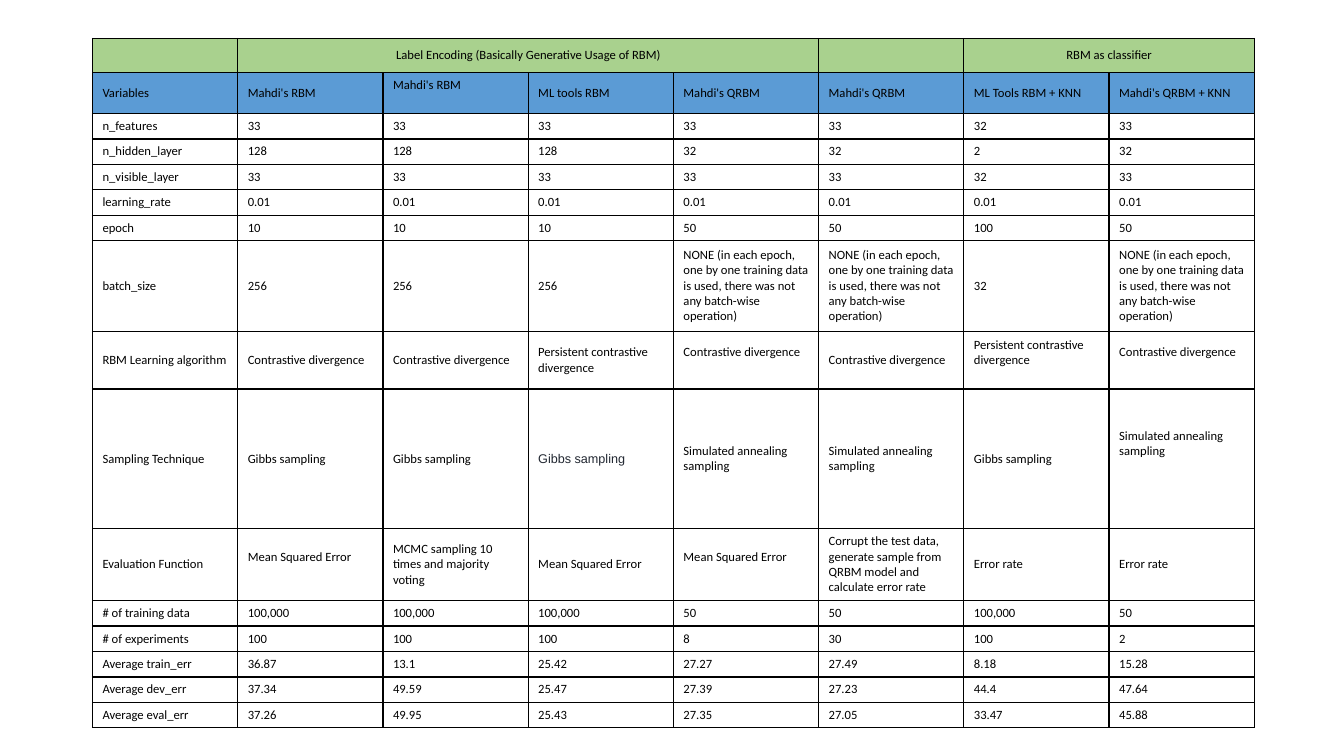
from lxml import etree
from pptx import Presentation
from pptx import util as u
from pptx.dml import color
from pptx.enum import text
from pptx.oxml import ns

COLORS = {"group": "A9D18E", "header": "5B9BD5", "text": "000000",
          "slate": "222832", "border": "000000"}

NO_BATCH = ("NONE (in each epoch, one by one training data is used, "
            "there was not any batch-wise operation)")
CD = "Contrastive divergence"
PCD = "Persistent contrastive divergence"
GIBBS = "Gibbs sampling"
ANNEAL = "Simulated annealing sampling"
MSE = "Mean Squared Error"

# Row height in cm, then the cell texts
ROWS = [
    (0.86, ["", "Label Encoding (Basically Generative Usage of RBM)", "", "", "",
            "", "RBM as classifier", ""]),
    (1.03, ["Variables", "Mahdi's RBM", "Mahdi's RBM", "ML tools RBM", "Mahdi's QRBM",
            "Mahdi's QRBM", "ML Tools RBM + KNN", "Mahdi's QRBM + KNN"]),
    (0.64, ["n_features", "33", "33", "33", "33", "33", "32", "33"]),
    (0.64, ["n_hidden_layer", "128", "128", "128", "32", "32", "2", "32"]),
    (0.64, ["n_visible_layer", "33", "33", "33", "33", "33", "32", "33"]),
    (0.64, ["learning_rate"] + ["0.01"] * 7),
    (0.64, ["epoch", "10", "10", "10", "50", "50", "100", "50"]),
    (2.28, ["batch_size", "256", "256", "256", NO_BATCH, NO_BATCH, "32", NO_BATCH]),
    (1.46, ["RBM Learning algorithm", CD, CD, PCD, CD, CD, PCD, CD]),
    (3.52, ["Sampling Technique", GIBBS, GIBBS, GIBBS, ANNEAL, ANNEAL, GIBBS, ANNEAL]),
    (1.81, ["Evaluation Function", MSE, "MCMC sampling 10 times and majority voting",
            MSE, MSE, "Corrupt the test data, generate sample from QRBM model "
            "and calculate error rate", "Error rate", "Error rate"]),
    (0.64, ["# of training data", "100,000", "100,000", "100,000", "50", "50",
            "100,000", "50"]),
    (0.64, ["# of experiments", "100", "100", "100", "8", "30", "100", "2"]),
    (0.64, ["Average train_err", "36.87", "13.1", "25.42", "27.27", "27.49",
            "8.18", "15.28"]),
    (0.64, ["Average dev_err", "37.34", "49.59", "25.47", "27.39", "27.23",
            "44.4", "47.64"]),
    (0.64, ["Average eval_err", "37.26", "49.95", "25.43", "27.35", "27.05",
            "33.47", "45.88"]),
]
ROW_FILLS = {0: "group", 1: "header"}
COL_W = 3.66
N_COLS = 8

# Bottom margins in cm of the cells whose text sits above the middle
RAISED = {(1, 2): 0.51, (8, 4): 0.51, (8, 6): 0.51, (8, 7): 0.51,
          (9, 7): 0.89, (10, 1): 0.51, (10, 4): 0.51}


def add_borders(cell):
    tc_pr = cell._tc.get_or_add_tcPr()
    for side in ("a:lnL", "a:lnR", "a:lnT", "a:lnB"):
        ln = etree.SubElement(tc_pr, ns.qn(side), w=str(u.Pt(1)))
        fill = etree.SubElement(ln, ns.qn("a:solidFill"))
        etree.SubElement(fill, ns.qn("a:srgbClr"), val=COLORS["border"])


prs = Presentation()
prs.slide_width, prs.slide_height = u.Cm(33.87), u.Cm(19.05)
s = prs.slides.add_slide(prs.slide_layouts[6])

# Table frame
height = sum(h for h, _ in ROWS)
table = s.shapes.add_table(len(ROWS), N_COLS, u.Cm(2.33), u.Cm(0.97),
                           u.Cm(COL_W * N_COLS), u.Cm(height)).table
table.first_row = table.horz_banding = False
for col in table.columns:
    col.width = u.Cm(COL_W)

# Cells
for i, (row_h, values) in enumerate(ROWS):
    table.rows[i].height = u.Cm(row_h)
    for j, value in enumerate(values):
        cell = table.cell(i, j)
        add_borders(cell)
        if i in ROW_FILLS:
            cell.fill.solid()
            cell.fill.fore_color.rgb = color.RGBColor.from_string(COLORS[ROW_FILLS[i]])
        else:
            cell.fill.background()
        cell.vertical_anchor = text.MSO_ANCHOR.MIDDLE
        if (i, j) in RAISED:
            cell.margin_bottom = u.Cm(RAISED[i, j])
        p = cell.text_frame.paragraphs[0]
        p.text = value
        p.alignment = text.PP_ALIGN.CENTER if i == 0 else text.PP_ALIGN.LEFT
        special = (i, j) == (9, 3)
        p.font.size = u.Pt(9)
        p.font.name = "Arial" if special else "Calibri"
        p.font.color.rgb = color.RGBColor.from_string(COLORS["slate" if special else "text"])

# Group headings
for first, last in ((1, 4), (6, 7)):
    table.cell(0, first).merge(table.cell(0, last))

prs.save("out.pptx")
